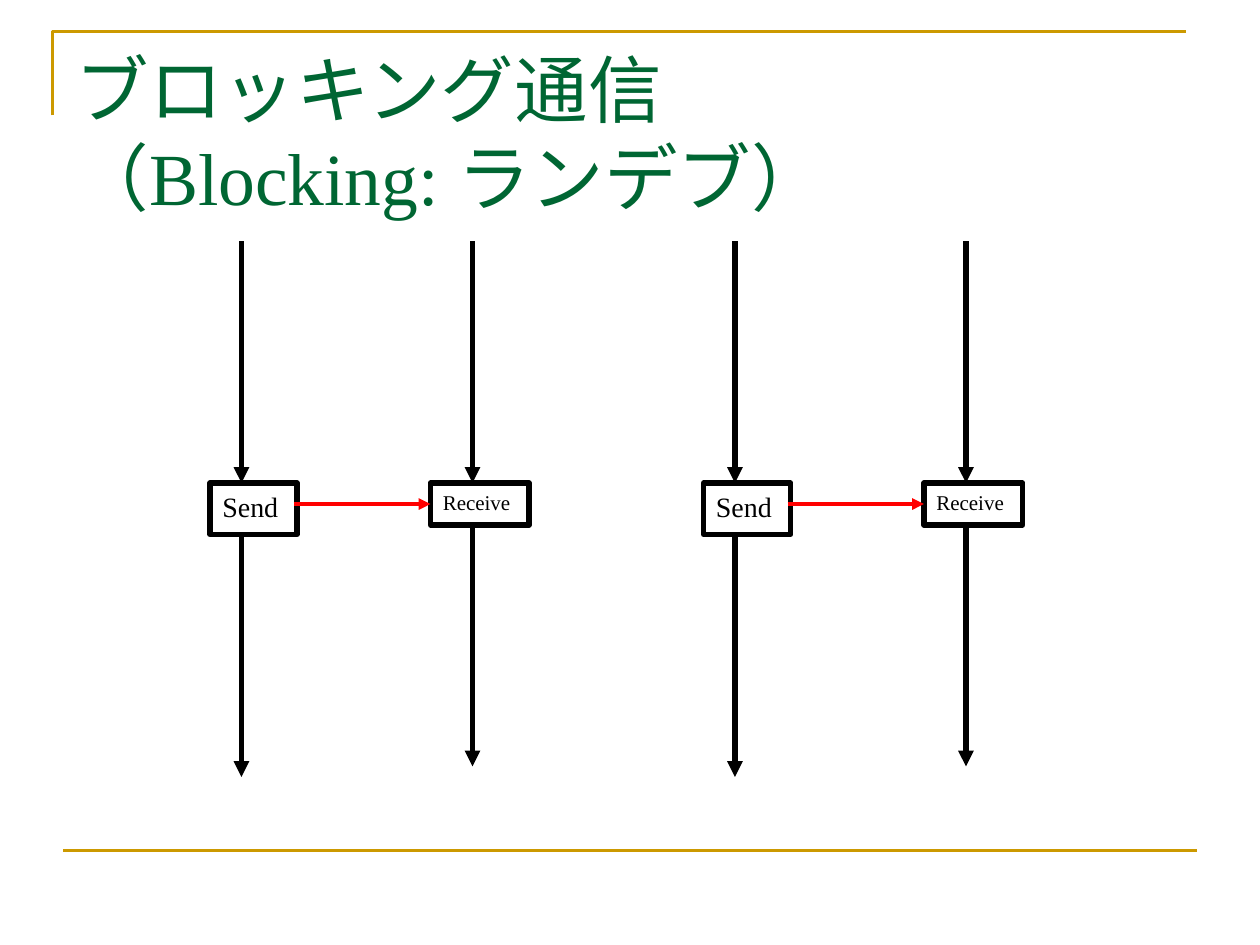
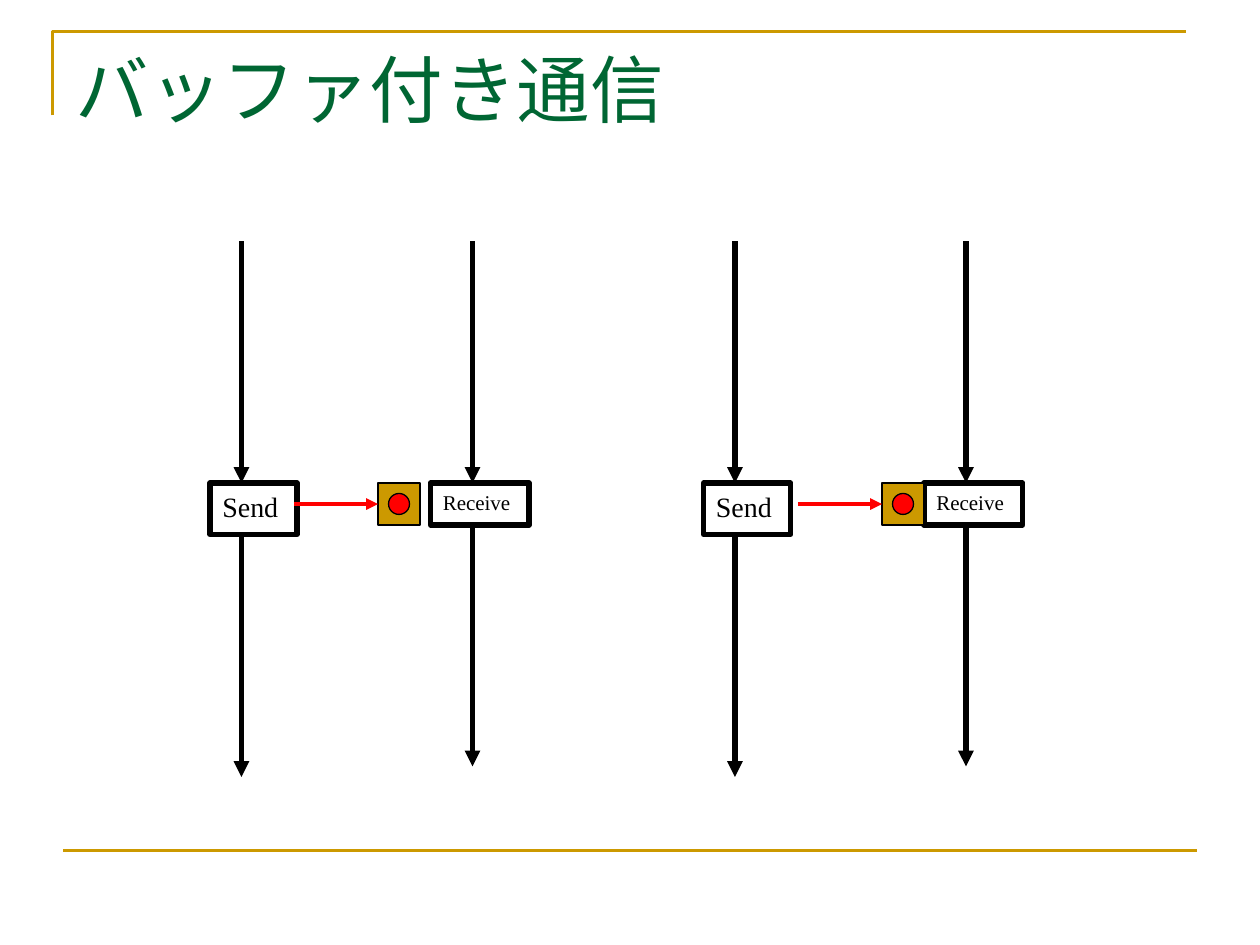
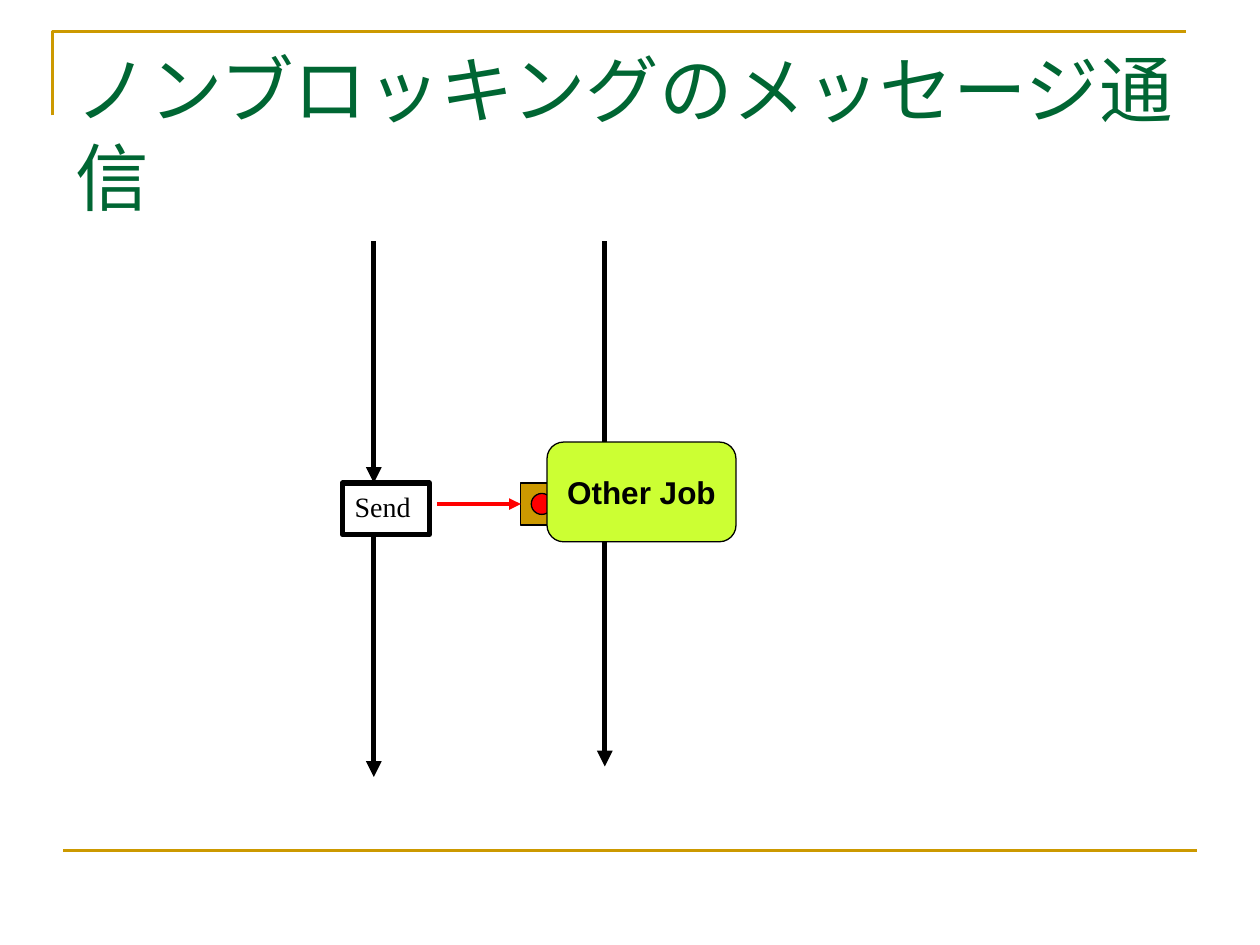
from lxml import etree
from pptx import Presentation
from pptx.dml.color import RGBColor
from pptx.enum.shapes import MSO_CONNECTOR, MSO_SHAPE
from pptx.enum.text import MSO_ANCHOR, MSO_AUTO_SIZE, PP_ALIGN
from pptx.oxml.ns import qn
from pptx.util import Inches, Pt

STRAIGHT = MSO_CONNECTOR.STRAIGHT
RECTANGLE, OVAL, ROUNDED = MSO_SHAPE.RECTANGLE, MSO_SHAPE.OVAL, MSO_SHAPE.ROUNDED_RECTANGLE
TOP, MIDDLE = MSO_ANCHOR.TOP, MSO_ANCHOR.MIDDLE
LEFT, CENTER = PP_ALIGN.LEFT, PP_ALIGN.CENTER
NO_FIT = MSO_AUTO_SIZE.NONE

COLORS = {"title": "006633", "gold": "CC9900", "ink": "000000",
          "message": "FF0000", "job": "CCFF33"}
SERIF, SANS = "Times New Roman", "Arial"
WIDTH, HEIGHT = Inches(10), Inches(7.5)
COLUMNS, ROWS = 120, 90
START_ROW, CALL_ROW, MESSAGE_ROW = 23, 46, 48
LEFT_SIDE = 1


def across(columns):
    """Turn grid columns into a length."""
    return round(WIDTH * columns / COLUMNS)


def down(rows):
    """Turn grid rows into a length."""
    return round(HEIGHT * rows / ROWS)


def rgb(name):
    """Look up a colour by name."""
    return RGBColor.from_string(COLORS[name])


def set_line(item, color, weight):
    """Give a shape or connector its line."""
    item.line.color.rgb = rgb(color)
    item.line.width = Pt(weight)


def add_span(para, text, font, size, color, bold=False):
    """Add one formatted run to a paragraph."""
    span = para.add_run()
    span.text = text
    span.font.name = font
    span.font.size = Pt(size)
    span.font.bold = bold
    span.font.color.rgb = rgb(color)


def add_rule(page, start, end, color, weight, arrow=False):
    """Draw a straight line between two grid points."""
    rule = page.shapes.add_connector(STRAIGHT, across(start[0]), down(start[1]),
                                     across(end[0]), down(end[1]))
    set_line(rule, color, weight)
    if arrow:
        etree.SubElement(rule.line._get_or_add_ln(), qn("a:tailEnd"), type="triangle")
    etree.SubElement(rule.element.spPr, qn("a:effectLst"))
    return rule


def add_box(page, kind, column, row, columns, rows, fill=None, weight=0.75):
    """Draw a preset shape on the grid."""
    box = page.shapes.add_shape(kind, across(column), down(row), across(columns), down(rows))
    box.shadow.inherit = False
    if fill:
        box.fill.solid()
        box.fill.fore_color.rgb = rgb(fill)
    else:
        box.fill.background()
    set_line(box, "ink", weight)
    return box


def add_label(box, text, font, size, align=LEFT, anchor=TOP, bold=False):
    """Write one line of text in a box."""
    frame = box.text_frame
    frame.word_wrap = True
    frame.vertical_anchor = anchor
    para = frame.paragraphs[0]
    para.alignment = align
    add_span(para, text, font, size, "ink", bold)


def add_send(page, column):
    """Draw the sending process with its Send call."""
    add_rule(page, (column, 51), (column, 74), "ink", 3, True)
    add_rule(page, (column, START_ROW), (column, CALL_ROW), "ink", 3, True)
    add_label(add_box(page, RECTANGLE, column - 3, CALL_ROW, 8.3, 4.9, weight=3),
              "Send", SERIF, 16)


def add_receiver(page, column):
    """Draw the time line of the receiving process."""
    add_rule(page, (column, 50), (column, 73), "ink", 3, True)
    add_rule(page, (column, START_ROW), (column, CALL_ROW), "ink", 3, True)


def add_receive(page, column):
    """Draw the receiving process with its Receive call."""
    add_receiver(page, column)
    box = add_box(page, RECTANGLE, column - 4, CALL_ROW, 9.4, 4, weight=3)
    add_label(box, "Receive", SERIF, 12)
    return box


def add_message(page, start, end, target):
    """Draw a red message arrow into the left side of its target."""
    arrow = add_rule(page, (start, MESSAGE_ROW), (end, MESSAGE_ROW), "message", 2.25, True)
    arrow.end_connect(target, LEFT_SIDE)


def add_buffer(page, column):
    """Draw a buffer holding a message, and the arrow that fills it."""
    buffer = add_box(page, RECTANGLE, column, CALL_ROW, 4, 4, "gold")
    add_message(page, column - 8, column, buffer)
    add_box(page, OVAL, column + 1, CALL_ROW + 1, 2, 2, "message")


def prepare_layout(layout):
    """Place the title and drop the footer placeholders of the layout."""
    for holder in list(layout.placeholders):
        if holder.placeholder_format.idx:
            holder.element.getparent().remove(holder.element)
        else:
            holder.left, holder.top = across(6), down(3.6)
            holder.width, holder.height = across(108), down(15)


def decorate_layout(layout, page):
    """Draw the gold corner and bottom rule and move them to the layout."""
    builder = page.shapes.build_freeform(across(5), down(11))
    builder.add_line_segments([(across(5), down(3)), (across(113), down(3))], close=False)
    corner = builder.convert_to_shape()
    corner.shadow.inherit = False
    corner.fill.background()
    set_line(corner, "gold", 1.5)
    base = add_rule(page, (6, 81), (114, 81), "gold", 1.5)
    for item in (corner, base):
        layout.shapes.element.append(item.element)


def add_page(deck, layout, *title_lines):
    """Add a slide and write its title."""
    page = deck.slides.add_slide(layout)
    frame = page.shapes.title.text_frame
    frame.auto_size = NO_FIT
    frame.word_wrap = True
    frame.vertical_anchor = TOP
    para = frame.paragraphs[0]
    para.alignment = LEFT
    for number, text in enumerate(title_lines):
        if number:
            para.add_line_break()
        add_span(para, text, SERIF, 42, "title")
    return page


def main():
    """Build the three slides on message passing."""
    deck = Presentation()
    deck.slide_width, deck.slide_height = WIDTH, HEIGHT
    layout = deck.slide_layouts[5]
    prepare_layout(layout)

    blocking = add_page(deck, layout, "ブロッキング通信", "（Blocking: ランデブ）")
    decorate_layout(layout, blocking)
    for sender in (23, 70):
        add_send(blocking, sender)
        receive = add_receive(blocking, sender + 22)
        add_message(blocking, sender + 5, sender + 18, receive)

    buffered = add_page(deck, layout, "バッファ付き通信")
    for sender, buffer in ((23, 36), (70, 84)):
        add_send(buffered, sender)
        add_receive(buffered, sender + 22)
        add_buffer(buffered, buffer)

    nonblocking = add_page(deck, layout, "ノンブロッキングのメッセージ通信")
    sender = 35.6
    add_send(nonblocking, sender)
    add_receiver(nonblocking, sender + 22)
    add_buffer(nonblocking, sender + 14)
    job = add_box(nonblocking, ROUNDED, 52.1, 42.1, 18, 9.5, "job")
    add_label(job, "Other Job", SANS, 18, CENTER, MIDDLE, True)

    deck.save("out.pptx")


if __name__ == "__main__":
    main()
